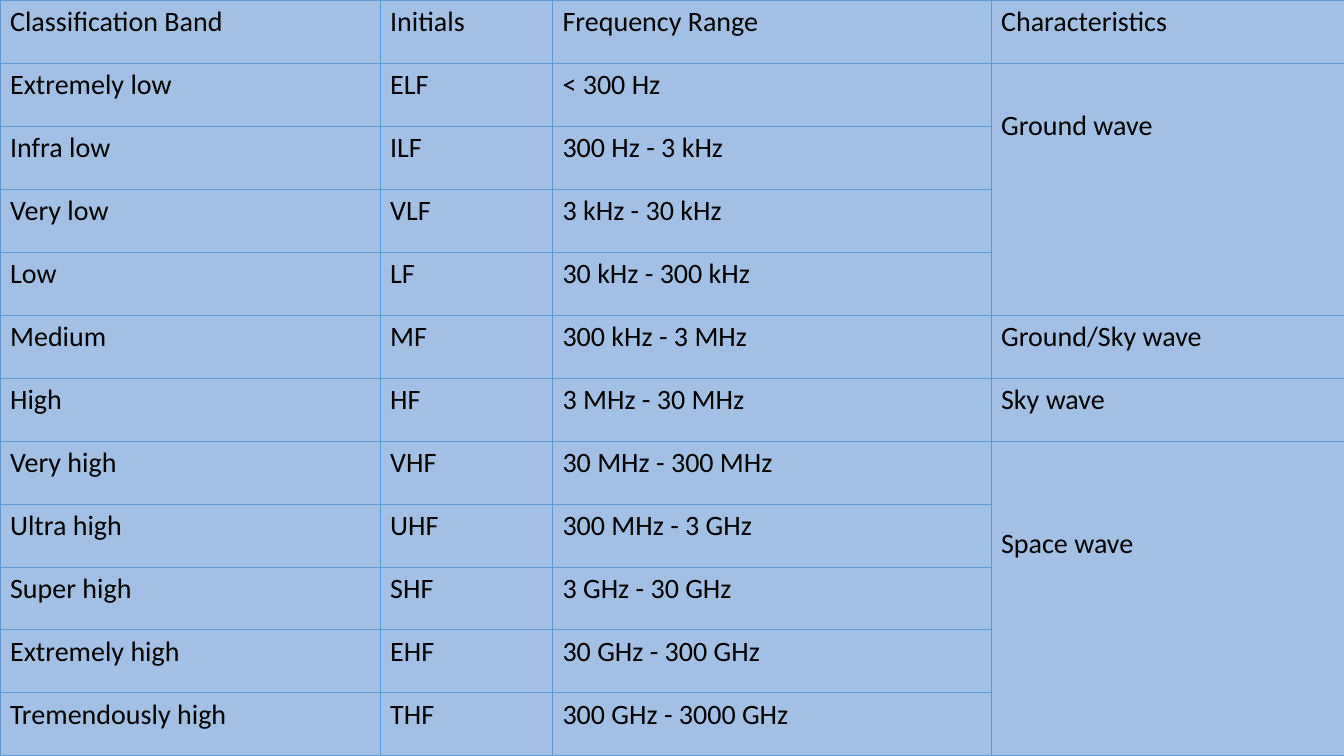
"""Build a slide with a table of radio frequency bands."""
from lxml import etree
from pptx import Presentation
from pptx.dml.color import RGBColor
from pptx.enum.text import MSO_ANCHOR
from pptx.oxml.ns import qn
from pptx.util import Inches, Pt

TOP = MSO_ANCHOR.TOP
SLIDE_W, SLIDE_H = 13.33, 7.5
COL_WIDTHS = [3.77, 1.71, 4.35, 3.5]
WAVE_COL = 3
LINE_STEP = 0.4
CELL_FILL, BORDER, TEXT = "A2BFE4", "5B9BD5", "000000"
FONT = {"name": "Calibri", "size": Pt(20), "bold": False}
MARGINS = {"margin_left": Inches(0.1), "margin_right": Inches(0.1),
           "margin_top": Inches(0.05), "margin_bottom": Inches(0.05),
           "vertical_anchor": TOP}

BANDS = [
    ("Classification Band", "Initials", "Frequency Range"),
    ("Extremely low", "ELF", "< 300 Hz"),
    ("Infra low", "ILF", "300 Hz - 3 kHz"),
    ("Very low", "VLF", "3 kHz - 30 kHz"),
    ("Low", "LF", "30 kHz - 300 kHz"),
    ("Medium", "MF", "300 kHz - 3 MHz"),
    ("High", "HF", "3 MHz - 30 MHz"),
    ("Very high", "VHF", "30 MHz - 300 MHz"),
    ("Ultra high", "UHF", "300 MHz - 3 GHz"),
    ("Super high", "SHF", "3 GHz - 30 GHz"),
    ("Extremely high", "EHF", "30 GHz - 300 GHz"),
    ("Tremendously high", "THF", "300 GHz - 3000 GHz"),
]
# (label, rows spanned, lines the label is lowered by)
WAVES = [
    ("Characteristics", 1, 0),
    ("Ground wave", 4, 1),
    ("Ground/Sky wave", 1, 0),
    ("Sky wave", 1, 0),
    ("Space wave", 5, 2),
]


def color(value):
    """Return the colour for a hex string."""
    return RGBColor.from_string(value)


def apply(obj, values):
    """Set each attribute in values on obj."""
    for name, value in values.items():
        setattr(obj, name, value)


def add_borders(cell):
    """Draw a thin line on all four sides of a cell."""
    tc_pr = cell._tc.get_or_add_tcPr()
    for side in ("a:lnL", "a:lnR", "a:lnT", "a:lnB"):
        ln = etree.SubElement(tc_pr, qn(side), w=str(Pt(0.5)))
        fill = etree.SubElement(ln, qn("a:solidFill"))
        etree.SubElement(fill, qn("a:srgbClr"), val=BORDER)


def style_cell(cell):
    """Give a cell its margins, borders and fill."""
    apply(cell, MARGINS)
    add_borders(cell)
    cell.fill.solid()
    cell.fill.fore_color.rgb = color(CELL_FILL)


def write(cell, text):
    """Put one formatted run of text in a cell."""
    r = cell.text_frame.paragraphs[0].add_run()
    r.text = text
    apply(r.font, FONT)
    r.font.color.rgb = color(TEXT)


def add_band_table(slide):
    """Add the styled, empty table that fills the slide."""
    table = slide.shapes.add_table(
        len(BANDS), len(COL_WIDTHS), 0, 0,
        Inches(SLIDE_W), Inches(SLIDE_H)).table
    apply(table, {"first_row": False, "horz_banding": False})
    for column, width in zip(table.columns, COL_WIDTHS):
        column.width = Inches(width)
    for row in table.rows:
        row.height = Inches(SLIDE_H / len(BANDS))
    for cell in table.iter_cells():
        style_cell(cell)
    return table


def fill_waves(table):
    """Merge and label the cells of the last column."""
    row = 0
    for label, span, lowered in WAVES:
        cell = table.cell(row, WAVE_COL)
        if span > 1:
            cell.merge(table.cell(row + span - 1, WAVE_COL))
        cell.margin_top = Inches(0.05 + lowered * LINE_STEP)
        write(cell, label)
        row += span


def main():
    """Build and save the slide."""
    prs = Presentation()
    apply(prs, {"slide_width": Inches(SLIDE_W), "slide_height": Inches(SLIDE_H)})
    slide = prs.slides.add_slide(prs.slide_layouts[6])
    table = add_band_table(slide)
    for i, band in enumerate(BANDS):
        for j, text in enumerate(band):
            write(table.cell(i, j), text)
    fill_waves(table)
    prs.save("out.pptx")


if __name__ == "__main__":
    main()
